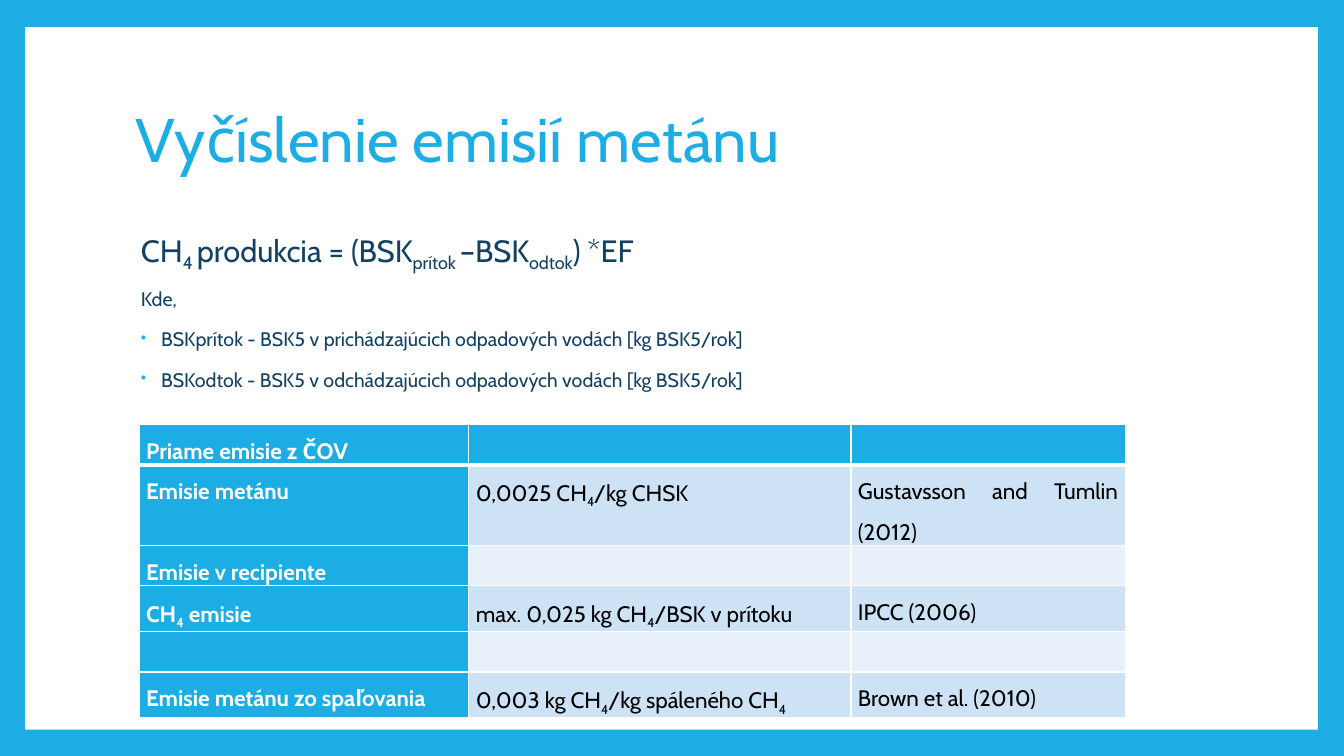
from lxml.etree import SubElement
from pptx import Presentation
from pptx.dml.color import RGBColor
from pptx.enum.shapes import MSO_SHAPE
from pptx.enum.text import MSO_ANCHOR, PP_ALIGN
from pptx.oxml.ns import qn
from pptx.util import Emu, Pt

PX = 9144  # 100 px to the inch
FONT = "Cabin"
BLUE, NAVY, WHITE, BLACK = "1CADE4", "134163", "FFFFFF", "000000"
BANDS = ("E8F1FA", "CDE3F5")

# Content: text between bars is subscript
TITLE = "Vyčíslenie emisií metánu"
BODY = [  # text, size, bulleted
    ("CH|4 |produkcia = (BSK|prítok |–BSK|odtok|) *EF", 22, False),
    ("Kde,", 14, False),
    ("BSKprítok - BSK5 v prichádzajúcich odpadových vodách [kg BSK5/rok]", 14, True),
    ("BSKodtok - BSK5 v odchádzajúcich odpadových vodách [kg BSK5/rok]", 14, True),
]
TABLE = [
    ("Priame emisie z ČOV", "", ""),
    ("Emisie metánu", "0,0025 CH|4|/kg CHSK", "Gustavsson and Tumlin (2012)"),
    ("Emisie v recipiente", "", ""),
    ("CH|4| emisie", "max. 0,025 kg CH|4|/BSK v prítoku", "IPCC (2006)"),
    ("", "", ""),
    ("Emisie metánu zo spaľovania", "0,003 kg CH|4|/kg spáleného CH|4", "Brown et al. (2010)"),
]
COLUMN_WIDTHS = (327, 379, 272)
ROW_HEIGHTS = (38, 80, 38, 38, 38, 38)


def px(*lengths):
    return [Emu(length * PX) for length in lengths]


def color(value):
    return RGBColor.from_string(value)


def paint(target, value):
    target.fill.solid()
    target.fill.fore_color.rgb = color(value)


def add_runs(paragraph, text, size, value, bold=False):
    for index, part in enumerate(text.split("|")):
        if not part:
            continue
        run = paragraph.add_run()
        run.text = part
        run.font.name, run.font.size, run.font.bold = FONT, Pt(size), bold
        run.font.color.rgb = color(value)
        if index % 2:
            run.font._element.set("baseline", "-25000")


def indent(paragraph, margin, first, bulleted):
    properties = paragraph._p.get_or_add_pPr()
    properties.set("marL", str(margin * PX))
    properties.set("indent", str(first * PX))
    if bulleted:
        bullet_color = SubElement(properties, qn("a:buClr"))
        SubElement(bullet_color, qn("a:srgbClr"), val=BLUE)
        SubElement(properties, qn("a:buSzPct"), val="80000")
        SubElement(properties, qn("a:buChar"), char="•")


def add_border(cell, side, points):
    line = SubElement(cell._tc.get_or_add_tcPr(), qn("a:ln" + side), w=str(Pt(points)))
    fill = SubElement(line, qn("a:solidFill"))
    SubElement(fill, qn("a:srgbClr"), val=WHITE)


def add_text_frame(slide, *box):
    frame = slide.shapes.add_textbox(*px(*box)).text_frame
    frame.word_wrap = True
    return frame


presentation = Presentation()
presentation.slide_width, presentation.slide_height = px(1333, 750)
slide = presentation.slides.add_slide(presentation.slide_layouts[6])

# Blue frame around a white panel
paint(slide.background, BLUE)
panel = slide.shapes.add_shape(MSO_SHAPE.RECTANGLE, *px(25, 27, 1282, 697))
panel.shadow.inherit = False
paint(panel, WHITE)
panel.line.fill.background()

# Title
title = add_text_frame(slide, 125, 67, 1080, 148)
title.vertical_anchor = MSO_ANCHOR.MIDDLE
title.paragraphs[0].line_spacing = 0.9
add_runs(title.paragraphs[0], TITLE, 44, BLUE)

# Formula and its explanation
body = add_text_frame(slide, 125, 225, 1080, 442)
for index, (text, size, bulleted) in enumerate(BODY):
    paragraph = body.add_paragraph() if index else body.paragraphs[0]
    paragraph.line_spacing = 0.9
    paragraph.space_before = Pt(14)
    indent(paragraph, *((25, -20) if bulleted else (5, 0)), bulleted)
    add_runs(paragraph, text, size, NAVY)

# Table of emission factors
table = slide.shapes.add_table(
    len(TABLE), len(COLUMN_WIDTHS),
    *px(138, 421, sum(COLUMN_WIDTHS), sum(ROW_HEIGHTS))).table
for column, width in zip(table.columns, px(*COLUMN_WIDTHS)):
    column.width = width
for row, height in zip(table.rows, px(*ROW_HEIGHTS)):
    row.height = height
for row_index, row in enumerate(TABLE):
    for column_index, text in enumerate(row):
        cell = table.cell(row_index, column_index)
        heading = row_index == 0 or column_index == 0
        for side in "LRTB":
            under_header = (row_index, side) in ((0, "B"), (1, "T"))
            add_border(cell, side, 3 if under_header else 1)
        paint(cell, BLUE if heading else BANDS[row_index % 2])
        if text:
            cell.margin_left, cell.margin_right, cell.margin_top, cell.margin_bottom = px(7, 7, 0, 0)
            paragraph = cell.text_frame.paragraphs[0]
            paragraph.alignment = PP_ALIGN.JUSTIFY
            paragraph.line_spacing = 1.5
            add_runs(paragraph, text, 16, WHITE if heading else BLACK, heading)

presentation.save("out.pptx")
